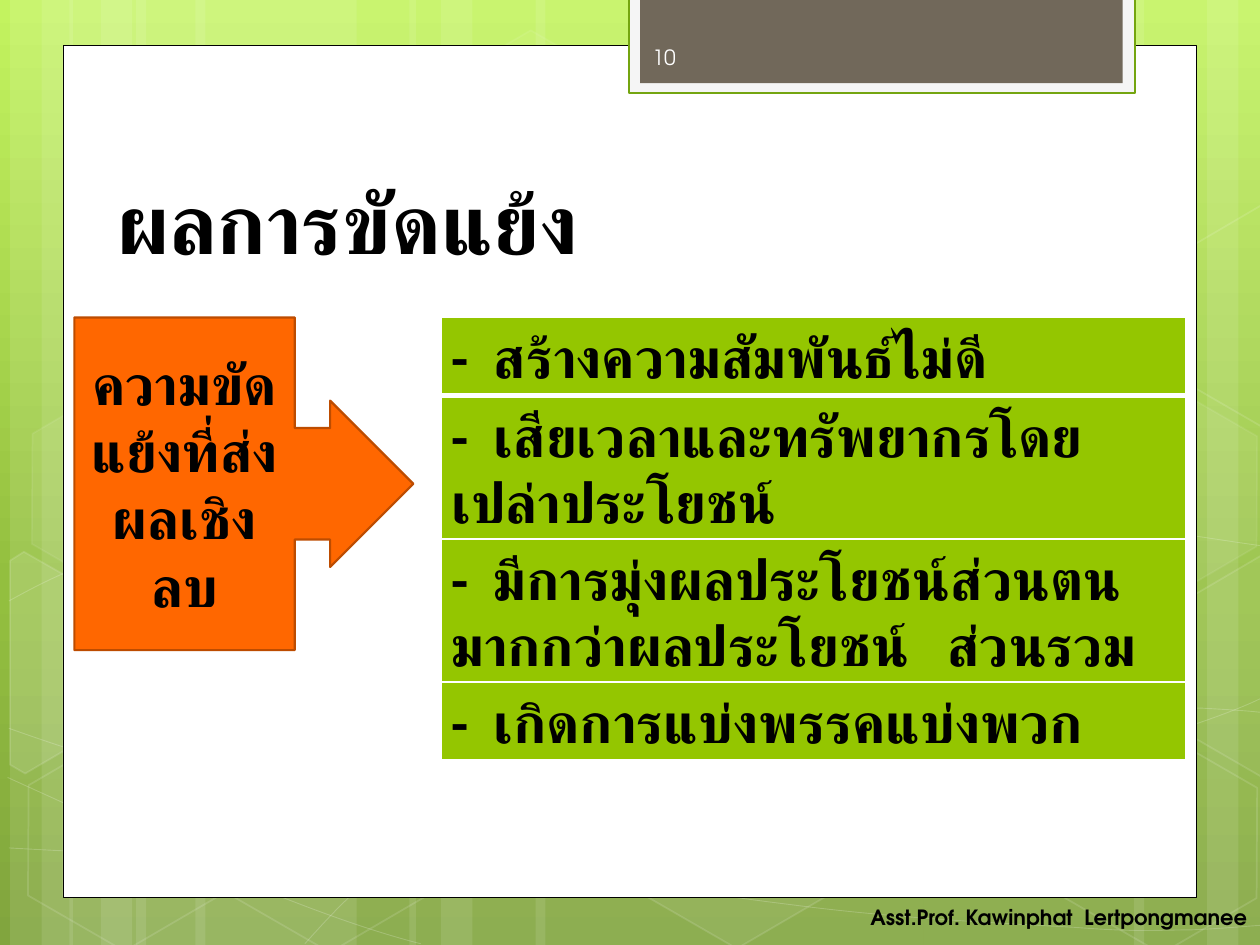
from copy import deepcopy

from lxml.etree import SubElement
from pptx import Presentation
from pptx.dml.color import RGBColor
from pptx.enum.shapes import MSO_SHAPE as Shape
from pptx.enum.text import MSO_ANCHOR as Anchor, PP_ALIGN as Align
from pptx.oxml.ns import qn
from pptx.util import Inches, Pt

HEX = {
    "top": "C3F35F", "mid": "93BF3F", "low": "81A53E", "white": "FFFFFF",
    "black": "000000", "tab": "F5F5F5", "edge": "74A510", "brown": "71685A",
    "pale": "FEFEFE", "orange": "FF6700", "rust": "BD4C00", "green": "94C600",
}
SANS, HEAD, BODY = "TeX Gyre Adventor", "Roboto", "Calibri"

STRIPES = [(1.08, 1.75), (0.08, 0.5), (0.33, 0.83), (1.55, 1.75), (0.55, 0.5),
           (0.8, 0.83), (7.33, 1.75), (9.58, 0.5), (9, 0.83), (4.25, 3.08),
           (3.25, 0.5), (3.5, 0.83)]
WAVES = [
    [(0.07, 6.73), (0.61, 6.76), (1.15, 6.79), (1.9, 6.78), (2.65, 6.77),
     (3.58, 6.75), (4.58, 6.65), (5.58, 6.55), (7, 6.36), (7.92, 6.17),
     (8.83, 5.98), (9.77, 5.68), (10.07, 5.51)],
    [(0.07, 4.77), (0.36, 4.61), (0.65, 4.46), (1.21, 4.31), (1.78, 4.16),
     (2.59, 3.94), (3.47, 3.87), (4.36, 3.8), (5.44, 3.79), (6.54, 3.87),
     (7.64, 3.95), (9.47, 4.26), (10.07, 4.34)],
    [(0.06, 6.17), (1.27, 6.72), (2.47, 7.27), (3.34, 7.49)],
    [(0.07, 5.78), (0.38, 5.89), (0.7, 6), (1.28, 6.16), (1.86, 6.31),
     (2.73, 6.56), (3.57, 6.73), (4.4, 6.9), (5.45, 7.08), (6.28, 7.18),
     (7.11, 7.29), (8, 7.33), (8.53, 7.36), (9.05, 7.4), (9.19, 7.38),
     (9.45, 7.38), (9.71, 7.37), (9.89, 7.35), (10.07, 7.34)],
    [(2.42, 7.49), (2.6, 7.29), (2.78, 7.09), (3.02, 6.91), (3.26, 6.73),
     (3.6, 6.53), (3.88, 6.39), (4.16, 6.25), (4.33, 6.19), (4.7, 6.09),
     (5.06, 5.99), (5.73, 5.85), (6.08, 5.78), (6.44, 5.71), (6.49, 5.71),
     (6.8, 5.69), (7.11, 5.66), (7.6, 5.63), (7.94, 5.62), (8.29, 5.61),
     (8.86, 5.62), (8.86, 5.62), (9.08, 5.62), (9.31, 5.62), (9.53, 5.62),
     (9.71, 5.63), (9.88, 5.64), (9.97, 5.65), (10.06, 5.66), (10.03, 5.65),
     (10.06, 5.66)],
]
CELLS = [(3.34, 0.36, 4, 8), (4.97, 5.89, 6, 12), (0.11, 5.91, 0, 12),
         (0.14, 3.12, 7, 8), (1.74, 5.92, 0, 12), (8.34, 5.93, 0, 12),
         (8.34, 3.14, 7, 8)]
CUTS = [
    ([(0.08, 4.45), (0.19, 4.38), (0.96, 4.82), (0.95, 5.7), (0.2, 6.14),
      (0.08, 6.07)], 10),
    ([(9.26, 4.85), (10.01, 4.41), (10.09, 4.46), (10.09, 6.13),
      (10.02, 6.17), (9.26, 5.73)], 4),
    ([(9.26, 2.07), (10.01, 1.63), (10.1, 1.68), (10.09, 3.35),
      (10.02, 3.39), (9.26, 2.95)], 0),
]
ROWS = [
    ("-  สร้างความสัมพันธ์ไม่ดี", 0.62),
    ("-  เสียเวลาและทรัพยากรโดยเปล่าประโยชน์", 1.13),
    ("-  มีการมุ่งผลประโยชน์ส่วนตนมากกว่าผลประโยชน์   ส่วนรวม", 1.13),
    ("-  เกิดการแบ่งพรรคแบ่งพวก", 0.62),
]


def tint(name):
    """Return the named colour."""
    return RGBColor.from_string(HEX[name])


def fade(part, alpha):
    """Set the opacity in percent of a solid fill or line."""
    color = next(part.iter(qn("a:srgbClr")))
    SubElement(color, qn("a:alpha")).set("val", str(alpha * 1000))


def paint(shape, fill=None, line=None, width=1, clear=0, faint=0):
    """Set fill and line, with optional opacity for each."""
    shape.shadow.inherit = False
    props = shape._element.spPr
    if fill:
        shape.fill.solid()
        shape.fill.fore_color.rgb = tint(fill)
        if clear:
            fade(props.find(qn("a:solidFill")), clear)
    else:
        shape.fill.background()
    if line:
        shape.line.color.rgb = tint(line)
        shape.line.width = Pt(width)
        if faint:
            fade(props.find(qn("a:ln")), faint)
    else:
        shape.line.fill.background()


def block(slide, kind, box, **look):
    """Add a painted preset shape."""
    shape = slide.shapes.add_shape(kind, *map(Inches, box))
    paint(shape, **look)
    return shape


def trace(slide, points, close, **look):
    """Add a painted outline through the points."""
    spots = [(Inches(x), Inches(y)) for x, y in points]
    pen = slide.shapes.build_freeform(*spots[0])
    pen.add_line_segments(spots[1:], close=close)
    shape = pen.convert_to_shape()
    paint(shape, **look)
    return shape


def bend(shape):
    """Turn each three line segments into one cubic curve."""
    lines = list(shape._element.iter(qn("a:lnTo")))
    for i in range(0, len(lines), 3):
        curve = lines[i].makeelement(qn("a:cubicBezTo"), {})
        lines[i].addprevious(curve)
        for line in lines[i:i + 3]:
            curve.append(line[0])
            line.getparent().remove(line)


def write(frame, text, size, face, color="black", bold=True,
          align=Align.LEFT, anchor=Anchor.MIDDLE):
    """Write one run into a text frame."""
    frame.word_wrap = True
    frame.vertical_anchor = anchor
    para = frame.paragraphs[0]
    para.alignment = align
    run = para.add_run()
    run.text = text
    font = run.font
    font.size, font.name, font.bold = Pt(size), face, bold
    font.color.rgb = tint(color)
    SubElement(run._r.rPr, qn("a:cs")).set("typeface", face)
    return para


def label(slide, box, text, **style):
    """Add a small line of text."""
    frame = slide.shapes.add_textbox(*map(Inches, box)).text_frame
    write(frame, text, 12, SANS, **style)


def backdrop(slide):
    """Draw the gradient, stripes, waves and hexagons."""
    fill = slide.background.fill
    fill.gradient()
    fill.gradient_angle = 270
    stops = next(slide.element.iter(qn("a:gsLst")))
    stops.append(deepcopy(stops[-1]))
    for stop, name, place in zip(fill.gradient_stops, ("top", "mid", "low"), (0, 0.62, 1)):
        stop.color.rgb = tint(name)
        stop.position = place
    for left, width in STRIPES:
        block(slide, Shape.RECTANGLE, (left, 0, width, 7.5), fill="white", clear=10)
    for knots in WAVES:
        bend(trace(slide, knots, False, line="white", width=0.5, faint=20))
    for left, top, clear, faint in CELLS:
        cell = block(slide, Shape.HEXAGON, (left, top, 1.75, 1.52),
                     fill="white" if clear else None, clear=clear,
                     line="white", faint=faint)
        cell.adjustments[0] = 0.285
        cell.rotation = 30
    for points, clear in CUTS:
        trace(slide, points, True, fill="white" if clear else None,
              clear=clear, line="white", faint=12)


def panel(slide):
    """Draw the white sheet with its number tab and the byline."""
    block(slide, Shape.RECTANGLE, (0.5, 0.36, 9, 6.76), fill="white", line="black", width=0.5)
    block(slide, Shape.RECTANGLE, (4.99, -0.02, 4.02, 0.76), fill="tab", line="edge", width=1.25)
    block(slide, Shape.RECTANGLE, (5.08, -0.02, 3.83, 0.68), fill="brown")
    label(slide, (6.17, 7.08, 3.83, 0.4), "Asst.Prof. Kawinphat  Lertpongmanee", align=Align.RIGHT)
    label(slide, (5.08, 0.25, 1.46, 0.4), "10", color="pale", bold=False)


def heading(slide, box):
    """Place the title above the sheet."""
    title = slide.shapes.title
    title.left, title.top, title.width, title.height = map(Inches, box)
    write(title.text_frame, "ผลการขัดแย้ง", 48, HEAD, anchor=Anchor.BOTTOM)
    slide.shapes._spTree.append(title._element)


def cause(slide, box):
    """Draw the arrow callout."""
    arrow = block(slide, Shape.RIGHT_ARROW_CALLOUT, box, fill="orange", line="rust", width=1.25)
    for i, value in enumerate((0.335, 0.25, 0.25, 0.65)):
        arrow.adjustments[i] = value
    write(arrow.text_frame, "ความขัดแย้งที่ส่งผลเชิงลบ", 32, BODY, align=Align.CENTER)


def border(cell, top, bottom):
    """Draw white cell borders."""
    props = cell._tc.get_or_add_tcPr()
    for i, (side, width) in enumerate((("L", 1), ("R", 1), ("T", top), ("B", bottom))):
        line = props.makeelement(qn(f"a:ln{side}"), {"w": str(Pt(width))})
        fill = SubElement(line, qn("a:solidFill"))
        SubElement(fill, qn("a:srgbClr")).set("val", HEX["white"])
        props.insert(i, line)


def effects(slide, left, top, width):
    """Build the one-column table of effects."""
    high = sum(height for _, height in ROWS)
    table = slide.shapes.add_table(len(ROWS), 1, *map(Inches, (left, top, width, high))).table
    for i, (text, height) in enumerate(ROWS):
        table.rows[i].height = Inches(height)
        cell = table.cell(i, 0)
        cell.fill.solid()
        cell.fill.fore_color.rgb = tint("green")
        cell.margin_left = cell.margin_right = Inches(0.08)
        cell.margin_top, cell.margin_bottom = Inches(0.08), 0
        write(cell.text_frame, text, 32, BODY, anchor=Anchor.TOP).line_spacing = Pt(38)
        border(cell, 3 if i == 1 else 1, 3 if i == 0 else 1)


def main():
    """Build and save the slide."""
    deck = Presentation()
    deck.slide_width, deck.slide_height = Inches(10), Inches(7.5)
    slide = deck.slides.add_slide(deck.slide_layouts[5])
    backdrop(slide)
    panel(slide)
    heading(slide, (0.83, 0.95, 7.68, 1.25))
    cause(slide, (0.59, 2.52, 2.69, 2.64))
    effects(slide, 3.5, 2.52, 5.91)
    deck.save("out.pptx")


if __name__ == "__main__":
    main()
